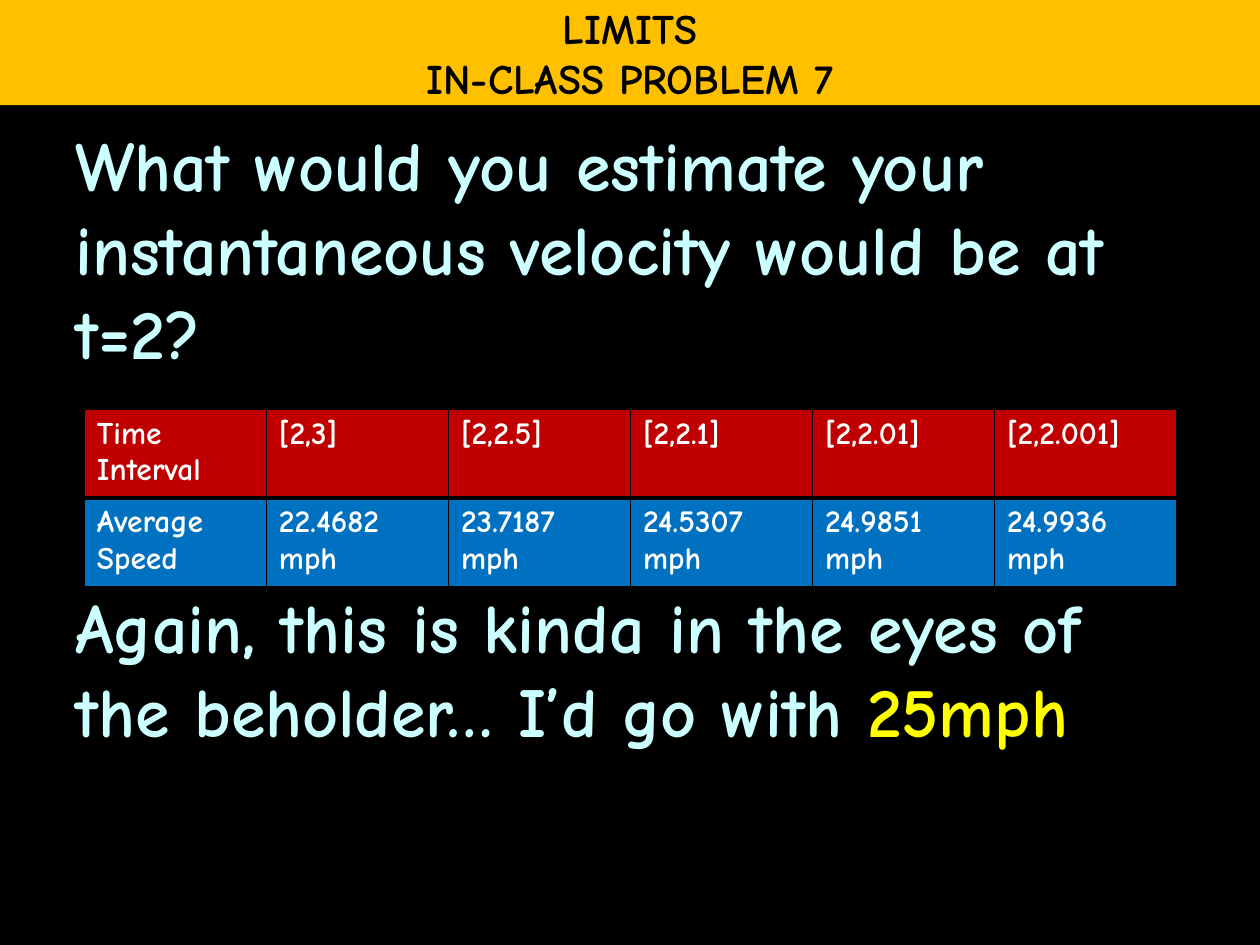
"""Build the limits problem slide with its table of average speeds."""
import pptx
import pptx.dml.color
import pptx.enum.shapes
import pptx.enum.text
import pptx.oxml
import pptx.oxml.ns
import pptx.util

Cm, Pt = pptx.util.Cm, pptx.util.Pt
RGBColor = pptx.dml.color.RGBColor

BLACK = RGBColor(0x00, 0x00, 0x00)
WHITE = RGBColor(0xFF, 0xFF, 0xFF)
AMBER = RGBColor(0xFF, 0xC0, 0x00)
PALE_CYAN = RGBColor(0xCC, 0xFF, 0xFF)
YELLOW = RGBColor(0xFF, 0xFF, 0x00)
RED = RGBColor(0xC0, 0x00, 0x00)
BLUE = RGBColor(0x00, 0x70, 0xC0)


def add_span(para, text, size, color):
    span = para.add_run()
    span.text = text
    look = {"name": "Comic Neue", "size": Pt(size), "bold": True}
    for name, value in look.items():
        setattr(span.font, name, value)
    span.font.color.rgb = color


def add_border(cell, side, width):
    cell._tc.get_or_add_tcPr().append(pptx.oxml.parse_xml(
        f'<a:{side} {pptx.oxml.ns.nsdecls("a")} w="{Pt(width)}">'
        f'<a:solidFill><a:srgbClr val="{BLACK}"/></a:solidFill></a:{side}>'))


deck = pptx.Presentation()
deck.slide_width, deck.slide_height = Cm(25.4), Cm(19.05)
page = deck.slides.add_slide(deck.slide_layouts[6])
page.background.fill.solid()
page.background.fill.fore_color.rgb = BLACK

body = page.shapes.add_textbox(Cm(1.27), Cm(2.33), Cm(22.86), Cm(15.67)).text_frame
body.word_wrap = True
question = body.paragraphs[0]
question.space_before = Pt(8)
add_span(question, "What would you estimate your instantaneous velocity would be at t=2?",
         40, PALE_CYAN)
answer = body.add_paragraph()
answer.space_before = Pt(120)
add_span(answer, "Again, this is kinda in the eyes of the beholder… I’d go with ",
         40, PALE_CYAN)
add_span(answer, "25mph", 40, YELLOW)

rows = [
    (RED, ["Time Interval", "[2,3]", "[2,2.5]", "[2,2.1]", "[2,2.01]", "[2,2.001]"],
     {"lnL": 1, "lnR": 1, "lnT": 1, "lnB": 3}),
    (BLUE, ["Average Speed", "22.4682 mph", "23.7187\nmph", "24.5307\nmph",
            "24.9851\nmph", "24.9936\nmph"],
     {"lnL": 1, "lnR": 1, "lnT": 3, "lnB": 1}),
]
table = page.shapes.add_table(2, 6, Cm(1.7), Cm(8.26), Cm(22.02), Cm(3.56)).table
table.horz_banding = False
for row, (color, texts, borders) in enumerate(rows):
    for column, text in enumerate(texts):
        cell = table.cell(row, column)
        for side, width in borders.items():
            add_border(cell, side, width)
        cell.fill.solid()
        cell.fill.fore_color.rgb = color
        for index, line in enumerate(text.split("\n")):
            frame = cell.text_frame
            para = frame.add_paragraph() if index else frame.paragraphs[0]
            add_span(para, line, 18, WHITE)

banner = page.shapes.add_shape(pptx.enum.shapes.MSO_SHAPE.RECTANGLE,
                               Cm(0), Cm(0), Cm(25.4), Cm(2.12))
banner.shadow.inherit = False
banner.fill.solid()
banner.fill.fore_color.rgb = AMBER
banner.line.fill.background()
title = banner.text_frame
layout = {"word_wrap": False, "vertical_anchor": pptx.enum.text.MSO_ANCHOR.MIDDLE}
for name, value in layout.items():
    setattr(title, name, value)
for index, line in enumerate(["LIMITS", "IN-CLASS PROBLEM 7"]):
    para = title.add_paragraph() if index else title.paragraphs[0]
    para.alignment = pptx.enum.text.PP_ALIGN.CENTER
    add_span(para, line, 24, BLACK)

deck.save("out.pptx")
